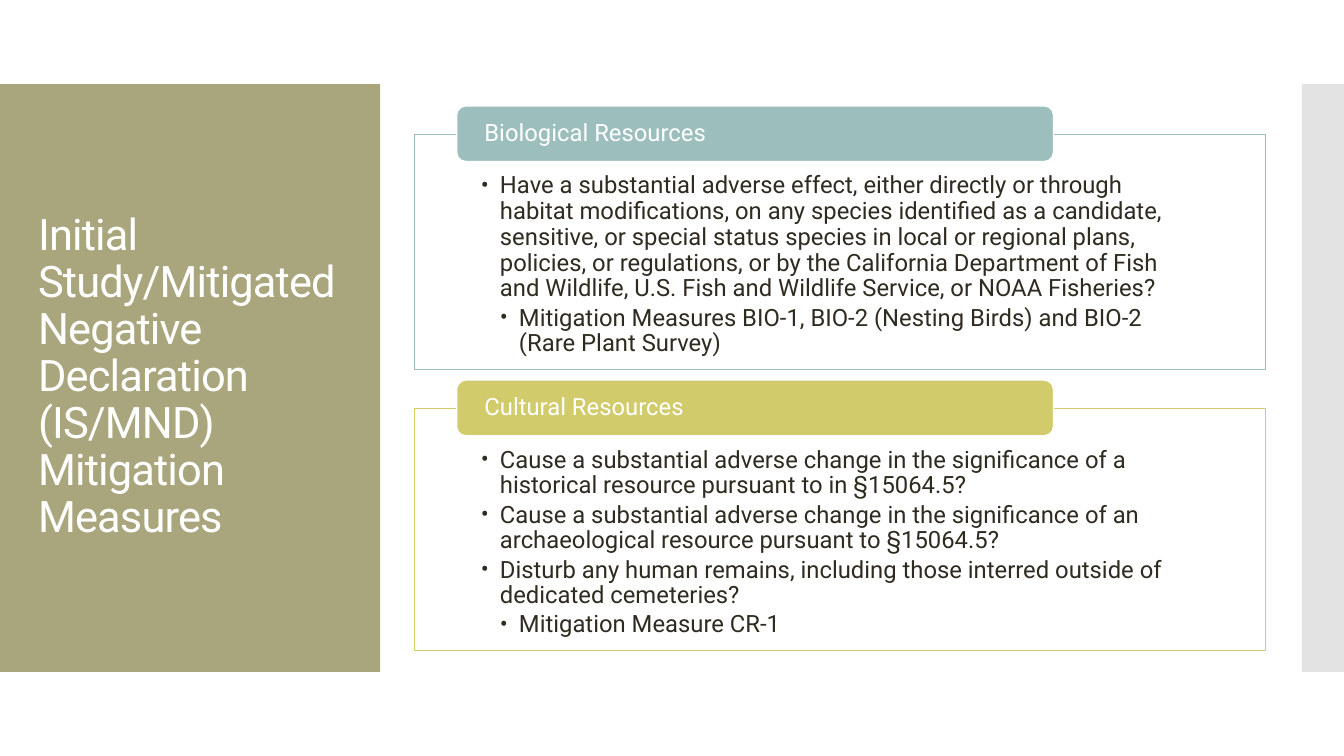
from lxml import etree
from pptx import Presentation, util as u
from pptx.dml.color import RGBColor
from pptx.enum import shapes, text
from pptx.oxml.ns import qn

WHITE = RGBColor(0xFF, 0xFF, 0xFF)
INK = RGBColor(0x2F, 0x2B, 0x20)
OLIVE = RGBColor(0xA9, 0xA5, 0x7C)
GREY = RGBColor(0xC8, 0xC8, 0xC8)
TEAL = RGBColor(0x9C, 0xBE, 0xBD)
LIME = RGBColor(0xD2, 0xCB, 0x6C)
FONT = "Roboto"
RECT = shapes.MSO_SHAPE.RECTANGLE
ROUND = shapes.MSO_SHAPE.ROUNDED_RECTANGLE

TITLE = "Initial Study/Mitigated Negative Declaration (IS/MND) Mitigation Measures"
# heading, colour, top, height, [(level, wording)]
TOPICS = [
    ("Biological Resources", TEAL, 3.38, 5.94, [
        (1, "Have a substantial adverse effect, either directly or through "
            "habitat modifications, on any species identified as a candidate, "
            "sensitive, or special status species in local or regional plans, "
            "policies, or regulations, or by the California Department of Fish "
            "and Wildlife, U.S. Fish and Wildlife Service, or NOAA Fisheries?"),
        (2, "Mitigation Measures BIO-1, BIO-2 (Nesting Birds) and BIO-2 "
            "(Rare Plant Survey)"),
    ]),
    ("Cultural Resources", LIME, 10.29, 6.1, [
        (1, "Cause a substantial adverse change in the significance of a "
            "historical resource pursuant to in §15064.5?"),
        (1, "Cause a substantial adverse change in the significance of an "
            "archaeological resource pursuant to §15064.5?"),
        (1, "Disturb any human remains, including those interred outside of "
            "dedicated cemeteries?"),
        (2, "Mitigation Measure CR-1"),
    ]),
]

WIDE, HIGH = 33.87, 19.05
BAND_TOP, BAND_H = 2.12, 14.81
SIDE_W, EDGE_W = 9.58, 1.06
BOX_X, BOX_W = 10.44, 21.46
TAB_X, TAB_W, TAB_H, TAB_UP = 11.51, 15.04, 1.4, 0.71
STEP = 0.48


def block(slide, kind, area, fill, line=None, alpha=None):
    """Add a filled shape; area is left, top, width, height in cm."""
    shape = slide.shapes.add_shape(kind, *map(u.Cm, area))
    shape.shadow.inherit = False
    shape.fill.solid()
    shape.fill.fore_color.rgb = fill
    if alpha:
        tint = shape.fill._xPr.find(qn("a:solidFill"))[0]
        etree.SubElement(tint, qn("a:alpha")).set("val", str(alpha * 1000))
    if line is None:
        shape.line.fill.background()
    else:
        shape.line.color.rgb = line
        shape.line.width = u.Pt(0.85)
    return shape


def frame(shape, anchor, pads):
    """Set wrapping, anchor and left, top, right, bottom insets in cm."""
    body = shape.text_frame
    body.word_wrap = True
    body.vertical_anchor = anchor
    (body.margin_left, body.margin_top,
     body.margin_right, body.margin_bottom) = map(u.Cm, pads)
    return body


def write(para, words, size, color, after=0):
    para.alignment = text.PP_ALIGN.LEFT
    para.line_spacing = 0.9
    para.space_before = u.Pt(0)
    para.space_after = u.Pt(after)
    run = para.add_run()
    run.text = words
    run.font.name = FONT
    run.font.size = u.Pt(size)
    run.font.color.rgb = color
    return run


def bullet(para, level):
    props = para._p.get_or_add_pPr()
    props.set("marL", str(u.Cm(STEP * level)))
    props.set("indent", str(-u.Cm(STEP)))
    para.level = level
    etree.SubElement(props, qn("a:buFont")).set("typeface", FONT)
    etree.SubElement(props, qn("a:buChar")).set("char", "•")


def topic(slide, head, color, top, high, points):
    box = block(slide, RECT, (BOX_X, top, BOX_W, high), WHITE, color, 90)
    body = frame(box, text.MSO_ANCHOR.TOP, (1.68, 0.99, 1.68, 0.33))
    for i, (level, words) in enumerate(points):
        para = body.add_paragraph() if i else body.paragraphs[0]
        bullet(para, level)
        write(para, words, 17, INK, 2.5)
    tab = block(slide, ROUND, (TAB_X, top - TAB_UP, TAB_W, TAB_H), color, WHITE)
    body = frame(tab, text.MSO_ANCHOR.MIDDLE, (0.63, 0, 0.63, 0))
    write(body.paragraphs[0], head, 17, WHITE)


def main():
    deck = Presentation()
    deck.slide_width, deck.slide_height = u.Cm(WIDE), u.Cm(HIGH)
    slide = deck.slides.add_slide(deck.slide_layouts[5])
    block(slide, RECT, (0, BAND_TOP, SIDE_W, BAND_H), OLIVE)
    block(slide, RECT, (WIDE - EDGE_W, BAND_TOP, EDGE_W, BAND_H), GREY, alpha=50)

    title = slide.shapes.title
    title.left, title.top, title.width, title.height = map(
        u.Cm, (0.71, 3.12, 8.18, 12.78))
    slide.shapes._spTree.append(title._element)  # bring in front of the band
    body = frame(title, text.MSO_ANCHOR.MIDDLE, (0.25, 0.13, 0.25, 0.13))
    body.auto_size = text.MSO_AUTO_SIZE.NONE
    run = write(body.paragraphs[0], TITLE, 31, WHITE)
    run.font._element.set("spc", "-60")

    for item in TOPICS:
        topic(slide, *item)
    deck.save("out.pptx")


if __name__ == "__main__":
    main()
